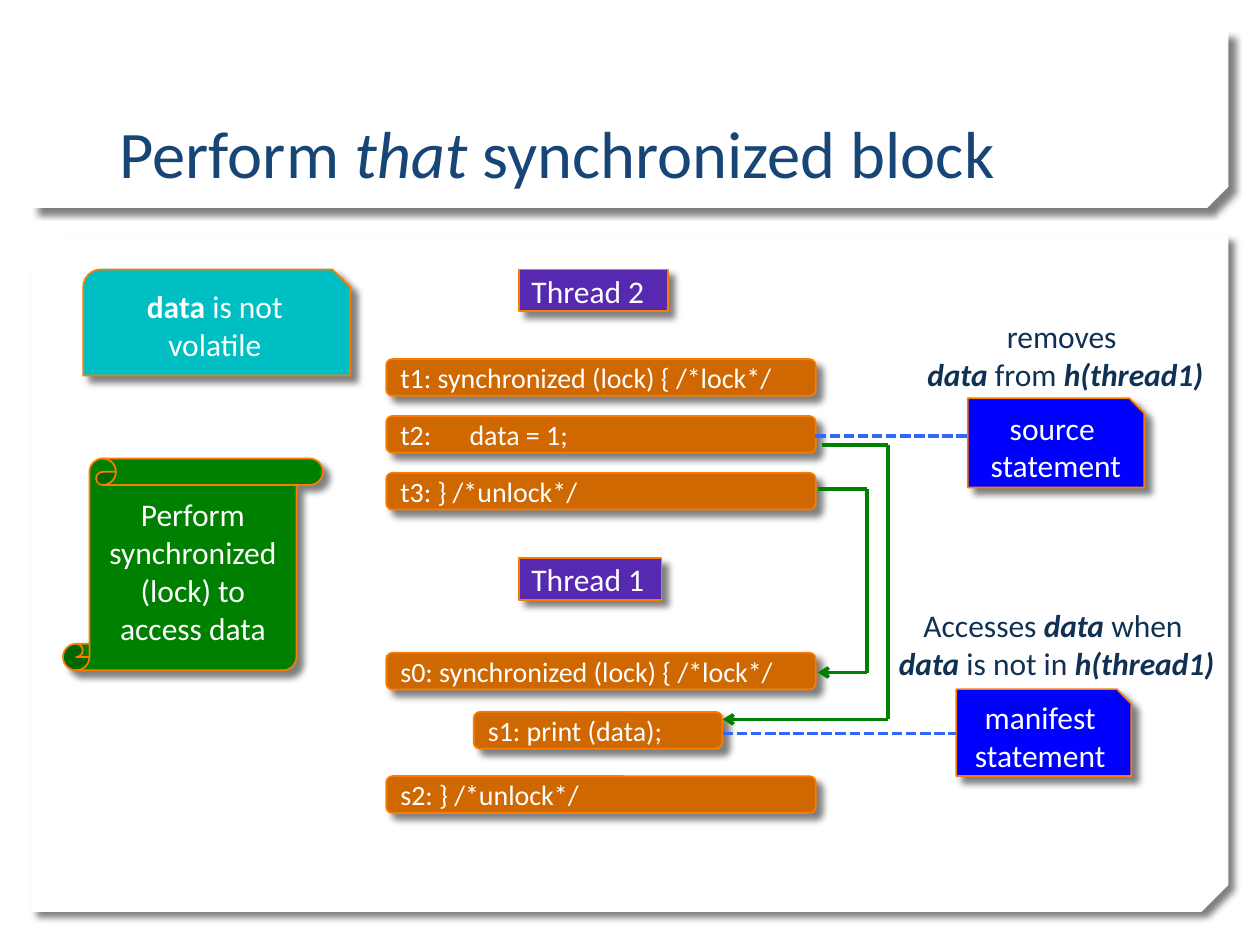
import dataclasses
import itertools
import typing

import lxml.etree
import pptx
import pptx.dml.color
import pptx.enum.dml
import pptx.enum.shapes
import pptx.enum.text
import pptx.oxml.ns
import pptx.util

Pt = pptx.util.Pt
Shape = pptx.enum.shapes.MSO_SHAPE
Align = pptx.enum.text.PP_ALIGN
Anchor = pptx.enum.text.MSO_ANCHOR
qn = pptx.oxml.ns.qn


@dataclasses.dataclass(frozen=True)
class Theme:
    font: str = "Calibri"
    title_size: float = 38
    label_size: float = 18
    code_size: float = 16
    title: str = "174576"
    note: str = "103154"
    white: str = "FFFFFF"
    outline: str = "FA7C00"
    code: str = "D06801"
    thread: str = "5729B1"
    fact: str = "00BFC3"
    scroll: str = "008000"
    statement: str = "0000FF"
    dash: str = "3366FF"
    order: str = "008000"
    shadow: str = "000000"


THEME = Theme()


class Span(typing.NamedTuple):
    text: str
    bold: bool = False
    italic: bool = False


class Panel(typing.NamedTuple):
    top: float
    height: float
    snip: float


class Card(typing.NamedTuple):
    kind: Shape
    left: float
    top: float
    width: float
    height: float
    fill: str
    lines: list
    size: float = THEME.label_size
    align: Align = Align.CENTER


class Note(typing.NamedTuple):
    left: float
    top: float
    width: float
    lines: list


class Route(typing.NamedTuple):
    points: list
    color: str
    dashed: bool = False


def rgb(color: str) -> pptx.dml.color.RGBColor:
    return pptx.dml.color.RGBColor.from_string(color)


def code_row(left: float, top: float, width: float, text: str) -> Card:
    return Card(Shape.ROUNDED_RECTANGLE, left, top, width, 21, THEME.code,
                [[Span(text)]], THEME.code_size, Align.LEFT)


def thread_tag(top: float, width: float, text: str) -> Card:
    return Card(Shape.RECTANGLE, 296.6, top, width, 23.8, THEME.thread,
                [[Span(text)]], align=Align.LEFT)


def write_text(box, lines: list, *, size: float, color: str, align=Align.LEFT,
               anchor=Anchor.MIDDLE, wrap: bool = True) -> None:
    frame = box.text_frame
    frame.word_wrap = wrap
    frame.vertical_anchor = anchor
    for index, spans in enumerate(lines):
        para = frame.add_paragraph() if index else frame.paragraphs[0]
        para.alignment = align
        if any("\t" in piece.text for piece in spans):
            stops = lxml.etree.SubElement(para._p.get_or_add_pPr(), qn("a:tabLst"))
            lxml.etree.SubElement(stops, qn("a:tab"), pos=str(Pt(39.5)), algn="l")
        for piece in spans:
            span = para.add_run()
            span.text = piece.text
            font = span.font
            font.name, font.size = THEME.font, Pt(size)
            font.bold, font.italic = piece.bold, piece.italic
            font.color.rgb = rgb(color)


def add_shadow(box) -> None:
    box.shadow.inherit = False
    effects = box.element.spPr.find(qn("a:effectLst"))
    outer = lxml.etree.SubElement(effects, qn("a:outerShdw"), blurRad=str(Pt(4)),
                                  dist=str(Pt(5)), dir="2700000", algn="tl",
                                  rotWithShape="0")
    color = lxml.etree.SubElement(outer, qn("a:srgbClr"), val=THEME.shadow)
    lxml.etree.SubElement(color, qn("a:alpha"), val="50000")


def add_filled(page, kind: Shape, left: float, top: float, width: float,
               height: float, fill: str):
    box = page.shapes.add_shape(kind, Pt(left), Pt(top), Pt(width), Pt(height))
    box.fill.solid()
    box.fill.fore_color.rgb = rgb(fill)
    add_shadow(box)
    return box


def draw_panel(page, panel: Panel) -> None:
    box = add_filled(page, Shape.SNIP_2_DIAG_RECTANGLE, 18, panel.top, 684,
                     panel.height, THEME.white)
    box.line.fill.background()
    box.adjustments[0], box.adjustments[1] = 0, panel.snip
    box.element.spPr.find(qn("a:xfrm")).set("flipV", "1")


def draw_title(page, spans: list) -> None:
    title = page.shapes.title
    title.element.getparent().append(title.element)
    title.left, title.top, title.width, title.height = map(Pt, (61.2, 23, 597, 90))
    write_text(title, [spans], size=THEME.title_size, color=THEME.title,
               anchor=Anchor.BOTTOM)


def draw_card(page, card: Card) -> None:
    box = add_filled(page, *card[:6])
    box.line.color.rgb = rgb(THEME.outline)
    box.line.width = Pt(1)
    write_text(box, card.lines, size=card.size, color=THEME.white, align=card.align)


def draw_note(page, note: Note) -> None:
    box = page.shapes.add_textbox(Pt(note.left), Pt(note.top), Pt(note.width), Pt(51))
    write_text(box, note.lines, size=THEME.label_size, color=THEME.note,
               align=Align.CENTER, anchor=Anchor.TOP, wrap=False)


def draw_route(page, route: Route) -> None:
    for start, end in itertools.pairwise(route.points):
        line = page.shapes.add_connector(pptx.enum.shapes.MSO_CONNECTOR.STRAIGHT,
                                         *map(Pt, (*start, *end)))
        line.line.color.rgb = rgb(route.color)
        line.line.width = Pt(2)
        if route.dashed:
            line.line.dash_style = pptx.enum.dml.MSO_LINE.SQUARE_DOT
        elif end == route.points[-1]:
            lxml.etree.SubElement(line.line._get_or_add_ln(), qn("a:tailEnd"), type="arrow")
        lxml.etree.SubElement(line.element.spPr, qn("a:effectLst"))


PANELS = [Panel(134.6, 386.6, 0.04), Panel(18, 100.8, 0.12)]
TITLE = [Span("Perform "), Span("that", italic=True), Span(" synchronized block")]
DATA = Span("data", True, True)
HISTORY = Span("h(thread1)", True, True)
CARDS = [
    thread_tag(154.1, 85, "Thread 2"),
    thread_tag(319, 81.4, "Thread 1"),
    *(code_row(220.7, 205.2 + 32.5 * index, 245.4, text) for index, text in enumerate(
        ["t1: synchronized (lock) { /*lock*/", "t2:\tdata = 1;", "t3: } /*unlock*/"])),
    code_row(220.7, 373, 245.4, "s0: synchronized (lock) { /*lock*/"),
    code_row(270.7, 406.8, 142, "s1: print (data);"),
    code_row(220.7, 443.5, 245.4, "s2: } /*unlock*/"),
    Card(Shape.SNIP_ROUND_RECTANGLE, 47.5, 154, 152.6, 60.6, THEME.fact,
         [[Span("data", True), Span(" is not volatile")]]),
    Card(Shape.VERTICAL_SCROLL, 36, 262, 148.5, 121, THEME.scroll,
         [[Span("Perform synchronized (lock) to access data")]]),
    Card(Shape.SNIP_1_RECTANGLE, 553, 227.5, 100.8, 51, THEME.statement,
         [[Span("source")], [Span(" statement")]]),
    Card(Shape.SNIP_1_RECTANGLE, 546.5, 393.8, 100, 49.7, THEME.statement,
         [[Span("manifest statement")]]),
]
NOTES = [
    Note(518.4, 177.8, 180.7, [[Span("removes ")], [DATA, Span(" from "), HISTORY]]),
    Note(502.6, 342.7, 202.3, [[Span("Accesses "), DATA, Span(" when ")],
                               [DATA, Span(" is not in "), HISTORY]]),
]
ROUTES = [
    Route([(466, 249.1), (553, 249.1)], THEME.dash, True),
    Route([(413, 419.2), (546.5, 419.2)], THEME.dash, True),
    Route([(467.3, 279.4), (495.3, 279.4), (495.3, 384.3), (467.3, 384.3)], THEME.order),
    Route([(469.5, 254.2), (507.3, 254.2), (507.3, 411.1), (413, 411.1)], THEME.order),
]


def main() -> None:
    deck = pptx.Presentation()
    deck.slide_width, deck.slide_height = Pt(720), Pt(540)
    page = deck.slides.add_slide(deck.slide_layouts[5])
    for panel in PANELS:
        draw_panel(page, panel)
    draw_title(page, TITLE)
    for draw, items in ((draw_card, CARDS), (draw_note, NOTES), (draw_route, ROUTES)):
        for item in items:
            draw(page, item)
    deck.save("out.pptx")


if __name__ == "__main__":
    main()
